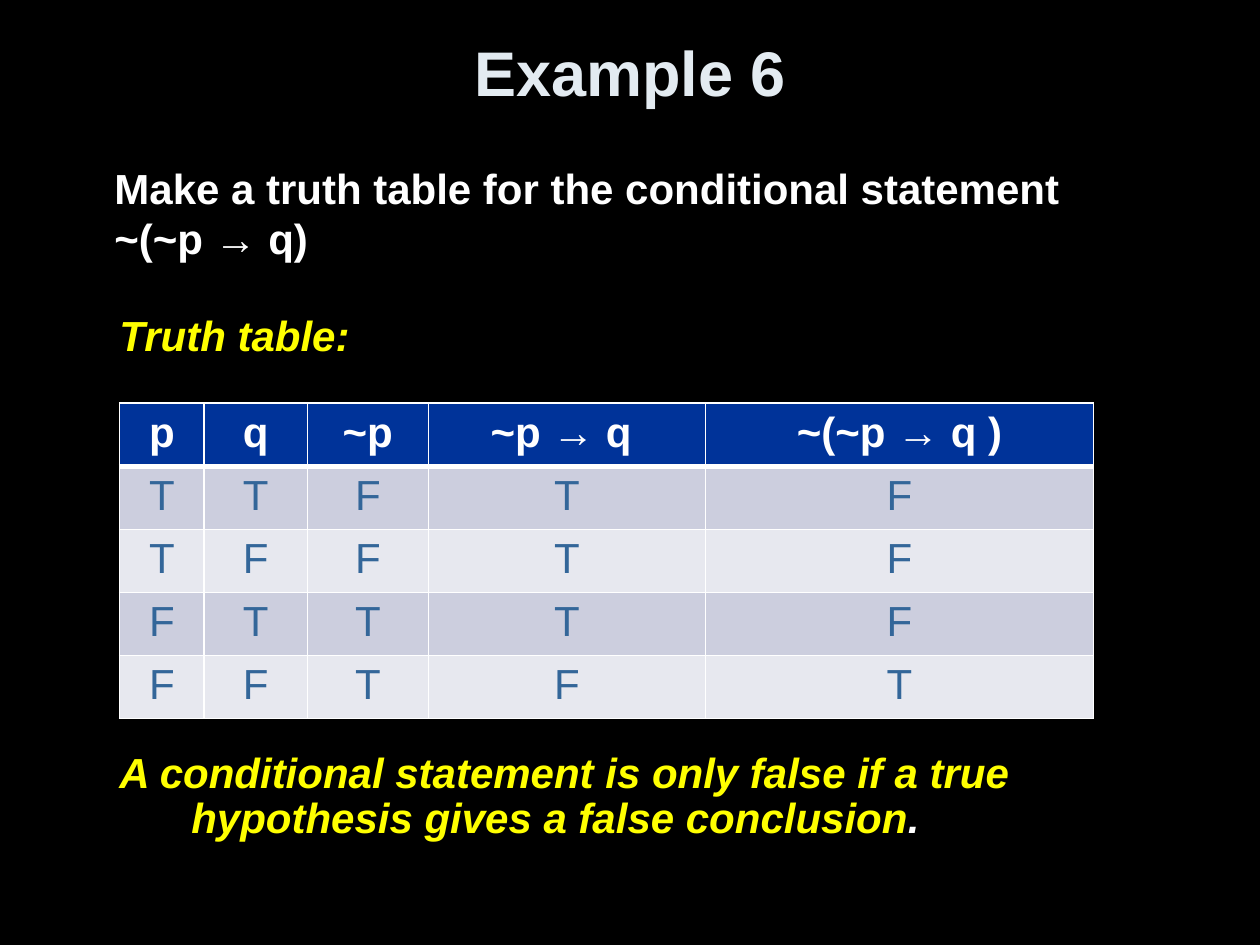
from lxml.etree import SubElement as Sub
from pptx import Presentation as Deck
from pptx.dml.color import RGBColor as Rgb
from pptx.enum.text import MSO_ANCHOR as Anchor, PP_ALIGN as Align
from pptx.oxml.ns import qn
from pptx.util import Inches, Pt

INK = {"back": "000000", "title": "E3EBF1", "white": "FFFFFF", "note": "FFFF00",
       "head": "003399", "cell": "336699", "dark": "CCCEDE", "light": "E7E8EF"}
HEAD = ["p", "q", "~p", "~p → q ", "~(~p → q )"]
ROWS = ["TTFTF", "TFFTF", "FTTTF", "FFTFT"]
WIDTHS = [6.7, 8.2, 9.6, 22, 30.8]


class Page:
    """Draws styled parts on one slide, measured on a grid of 100 by 75 units."""

    font, size, unit = "Arial", 24, 0.1

    def __init__(self, deck):
        self.slide = deck.slides.add_slide(deck.slide_layouts[6])
        fill = self.slide.background.fill
        fill.solid()
        fill.fore_color.rgb = Rgb.from_string(INK["back"])

    def span(self, *units):
        return [Inches(round(n * self.unit, 2)) for n in units]

    def run(self, para, text, ink, size=None, bold=True, slant=False):
        run = para.add_run()
        run.text = text
        font = run.font
        font.name, font.size = self.font, Pt(size or self.size)
        font.bold, font.italic = bold, slant
        font.color.rgb = Rgb.from_string(INK[ink])

    def box(self, area, lines, hang=None, align=Align.LEFT, anchor=Anchor.TOP,
            space=None, gap=0, **style):
        frame = self.slide.shapes.add_textbox(*self.span(*area)).text_frame
        frame.word_wrap, frame.vertical_anchor = True, anchor
        for i, line in enumerate(lines):
            para = frame.add_paragraph() if i else frame.paragraphs[0]
            para.alignment, para.line_spacing = align, space
            para.space_before, para.space_after = Pt(gap if i else 0), Pt(0)
            if hang:
                left, first = self.span(*hang)
                props = para._p.get_or_add_pPr()
                props.set("marL", str(left))
                props.set("indent", str(first))
            for text, ink in line:
                self.run(para, text, ink, **style)

    def edge(self, cell, base):
        props = cell._tc.get_or_add_tcPr()
        for side, width in (("L", 1), ("R", 1), ("T", 1), ("B", base)):
            line = Sub(props, qn(f"a:ln{side}"), w=str(Pt(width)))
            fill = Sub(line, qn("a:solidFill"))
            Sub(fill, qn("a:srgbClr"), val=INK["white"])

    def table(self, left, top, widths, height, rows):
        area = self.span(left, top, sum(widths), height * len(rows))
        table = self.slide.shapes.add_table(len(rows), len(widths), *area).table
        for col, width in zip(table.columns, self.span(*widths)):
            col.width = width
        for r, row in enumerate(rows):
            table.rows[r].height = self.span(height)[0]
            shade = ("dark" if r % 2 else "light") if r else "head"
            for c, text in enumerate(row):
                cell = table.cell(r, c)
                self.edge(cell, 1 if r else 3)
                cell.fill.solid()
                cell.fill.fore_color.rgb = Rgb.from_string(INK[shade])
                para = cell.text_frame.paragraphs[0]
                para.alignment = Align.CENTER
                self.run(para, text, "cell" if r else "white", bold=not r)


def main():
    deck = Deck()
    deck.slide_width, deck.slide_height = Inches(10), Inches(7.5)
    page = Page(deck)
    page.box((5, 1, 90, 9.3), [[("Example 6", "title")]],
             align=Align.CENTER, anchor=Anchor.MIDDLE, size=36)
    page.box((4.3, 12.4, 91.3, 9.1),
             [[("Make a truth table for the conditional statement", "white")],
              [("~(~p → q)", "white")]], hang=(30, -26.2))
    page.box((4.8, 24.5, 86.7, 45),
             [[("Truth table:", "note")],
              [("A conditional statement is only false if a true hypothesis "
                "gives a false conclusion", "note"), (".", "white")]],
             hang=(9.4, -5.7), space=0.9, gap=224, slant=True)
    page.table(9.5, 32, WIDTHS, 5, [HEAD, *ROWS])
    deck.save("out.pptx")


if __name__ == "__main__":
    main()
